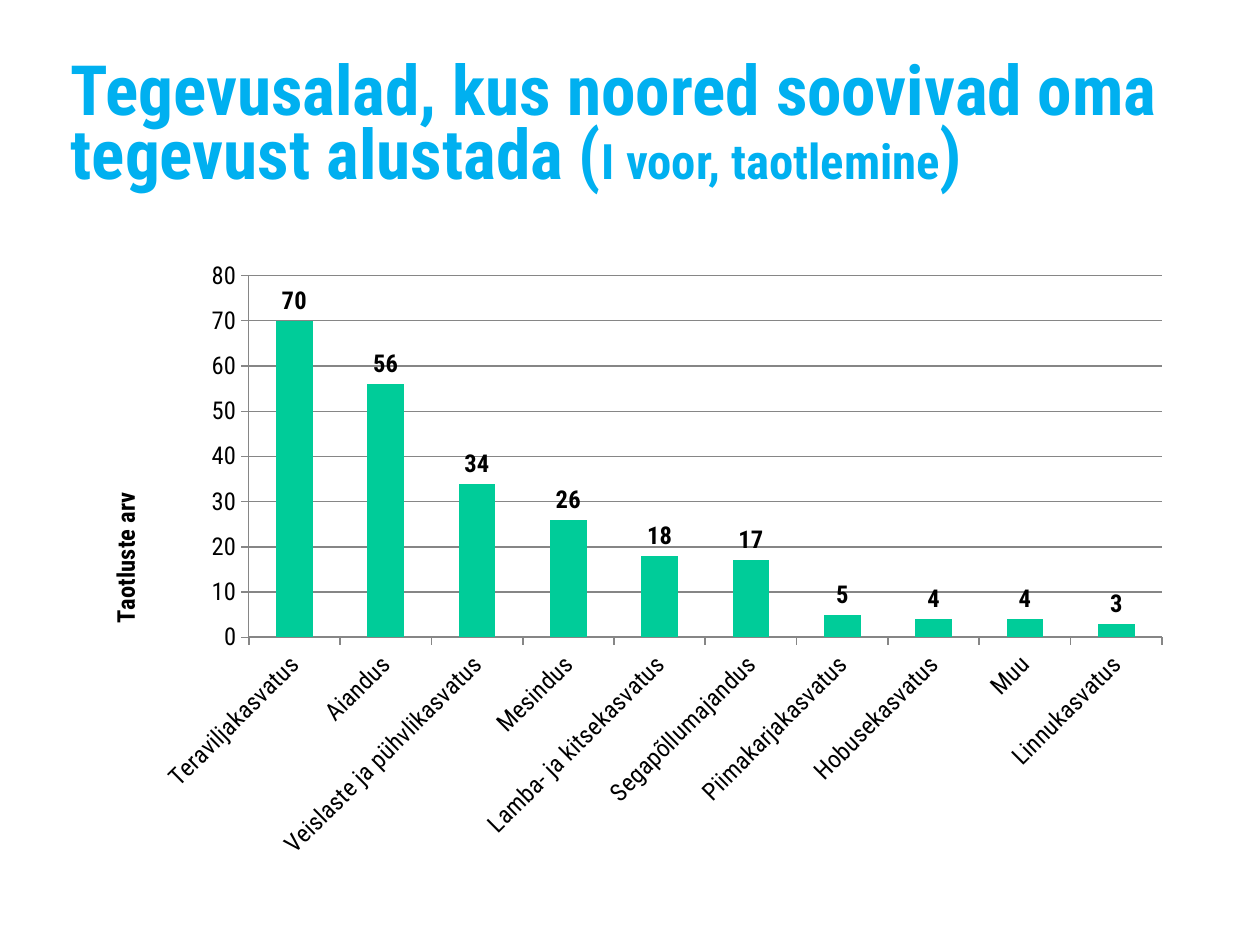
from lxml import etree
from pptx import Presentation
from pptx.chart.data import CategoryChartData
from pptx.dml.color import RGBColor
from pptx.enum import chart as ch, text
from pptx.oxml.ns import qn
from pptx.util import Pt

FONT = "Roboto Condensed"
DATA = {
    "Teraviljakasvatus": 70,
    "Aiandus": 56,
    "Veislaste ja pühvlikasvatus": 34,
    "Mesindus": 26,
    "Lamba- ja kitsekasvatus": 18,
    "Segapõllumajandus": 17,
    "Piimakarjakasvatus": 5,
    "Hobusekasvatus": 4,
    "Muu": 4,
    "Linnukasvatus": 3,
}


def rgb(value):
    """Turn a hex string into a colour."""
    return RGBColor.from_string(value)


def style(font, size=14, color="000000", bold=False):
    """Set the face, size, colour and weight of a font."""
    font.name, font.size, font.bold = FONT, Pt(size), bold
    font.color.rgb = rgb(color)


def add_text(p, content, **fmt):
    """Append a formatted run to a paragraph."""
    r = p.add_run()
    r.text = content
    style(r.font, **fmt)


def set_layout(parent, index, **fractions):
    """Give a chart part a manual layout in fractions of the chart."""
    for old in parent.findall(qn("c:layout")):
        parent.remove(old)
    layout = etree.Element(qn("c:layout"))
    manual = etree.SubElement(layout, qn("c:manualLayout"))
    settings = {"xMode": "edge", "yMode": "edge", **fractions}
    if "w" in fractions:
        settings = {"layoutTarget": "inner", **settings}
    for tag, value in settings.items():
        etree.SubElement(manual, qn(f"c:{tag}")).set("val", str(value))
    parent.insert(index, layout)


def place_title(s, left, top, width, height):
    """Place and fill the slide title."""
    sp = s.shapes.title
    sp.left, sp.top, sp.width, sp.height = map(Pt, (left, top, width, height))
    tf = sp.text_frame
    tf.word_wrap = True
    tf.auto_size = text.MSO_AUTO_SIZE.NONE
    tf.vertical_anchor = text.MSO_ANCHOR.MIDDLE
    tf.margin_left = tf.margin_top = tf.margin_right = tf.margin_bottom = 0
    p = tf.paragraphs[0]
    p.alignment = text.PP_ALIGN.LEFT
    p.line_spacing = 0.77
    for content, size in (
        ("Tegevusalad, kus noored soovivad oma tegevust alustada (", 39.6),
        ("I voor, taotlemine", 27.9),
        (")", 39.6),
    ):
        add_text(p, content, size=size, color="00B0F0", bold=True)


def format_axis(axis):
    """Apply the shared look of both axes."""
    style(axis.tick_labels.font)
    axis.major_tick_mark = ch.XL_TICK_MARK.OUTSIDE
    axis.minor_tick_mark = ch.XL_TICK_MARK.NONE
    axis.format.line.color.rgb = rgb("868686")
    axis.format.line.width = Pt(0.75)


def add_column_chart(s, left, top, width, height):
    """Add the column chart of applications by activity."""
    data = CategoryChartData()
    data.categories = list(DATA)
    data.add_series("Series 1", list(DATA.values()))
    chart = s.shapes.add_chart(
        ch.XL_CHART_TYPE.COLUMN_CLUSTERED, *map(Pt, (left, top, width, height)), data
    ).chart
    style(chart.font)
    chart.has_legend = chart.has_title = False

    plot = chart.plots[0]
    plot.gap_width = 150
    plot.vary_by_categories = False
    fill = plot.series[0].format.fill
    fill.solid()
    fill.fore_color.rgb = rgb("00CC99")
    labels = plot.series[0].data_labels
    labels.show_value = True
    labels.position = ch.XL_LABEL_POSITION.OUTSIDE_END
    style(labels.font, bold=True)

    cat, val = chart.category_axis, chart.value_axis
    format_axis(cat)
    format_axis(val)
    cat.format.line.width = Pt(1)
    cat._element.find(qn("c:txPr")).find(qn("a:bodyPr")).set("rot", "-2700000")
    val.minimum_scale, val.maximum_scale, val.major_unit = 0, 80, 10
    val.has_major_gridlines = True
    line = val.major_gridlines.format.line
    line.color.rgb = rgb("868686")
    line.width = Pt(0.75)

    tf = val.axis_title.text_frame
    add_text(tf.paragraphs[0], "Taotluste arv", bold=True)
    body = tf._txBody.find(qn("a:bodyPr"))
    body.set("rot", "-5400000")
    body.set("vert", "horz")
    set_layout(val.axis_title._element, 1, x=0.03, y=0.39)
    plot_area = chart._chartSpace.find(qn("c:chart")).find(qn("c:plotArea"))
    set_layout(plot_area, 0, x=0.16, y=0.05, w=0.82, h=0.58)


def main():
    """Build and save the slide."""
    prs = Presentation()
    prs.slide_width, prs.slide_height = Pt(720), Pt(540)
    s = prs.slides.add_slide(prs.slide_layouts[5])
    place_title(s, 40.32, 23.76, 636.48, 99.36)
    add_column_chart(s, 40.32, 139.68, 636.48, 356.4)
    prs.save("out.pptx")


if __name__ == "__main__":
    main()
